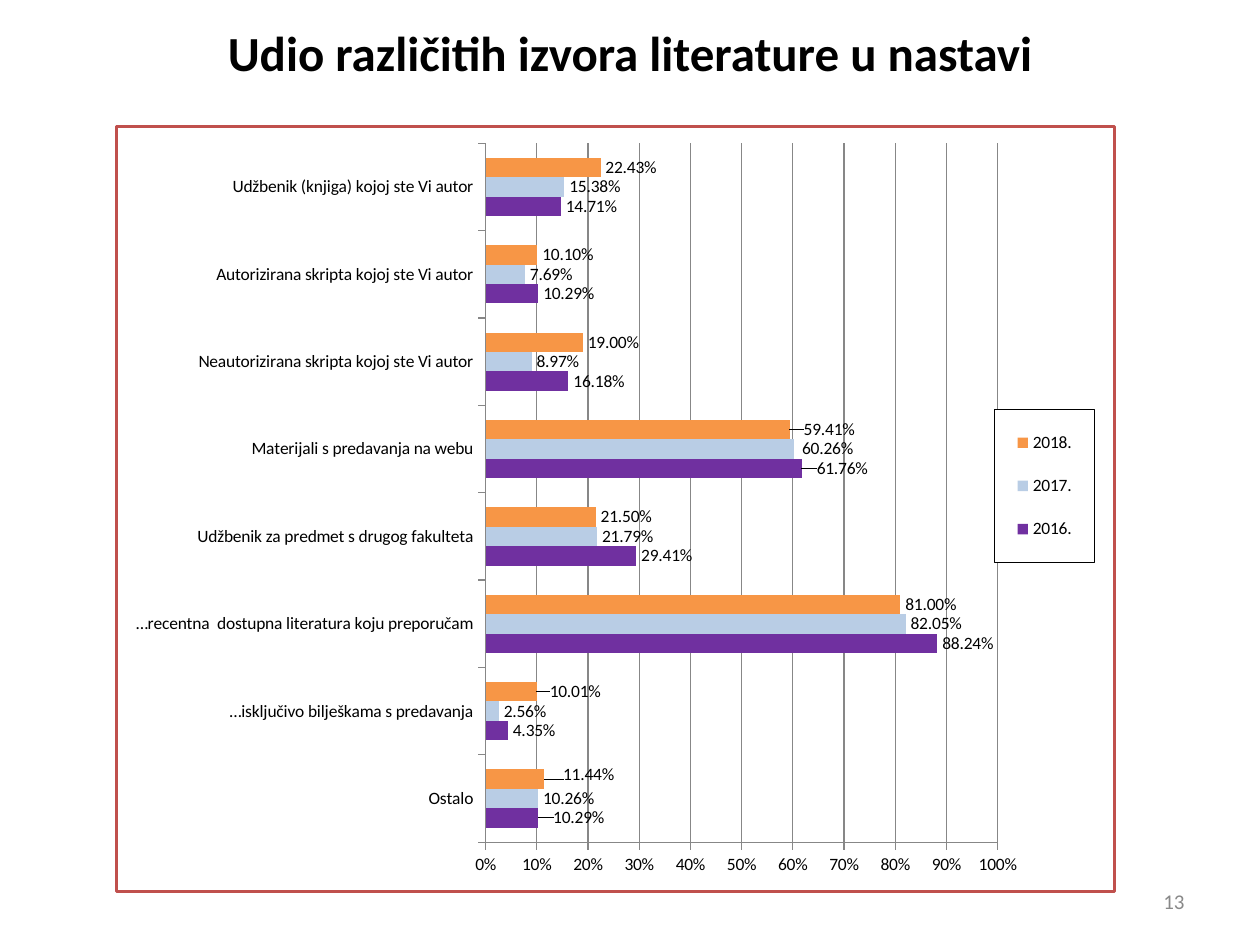
import pptx
import pptx.chart.data
import pptx.dml.color
import pptx.enum.chart
import pptx.enum.text
import pptx.oxml
import pptx.oxml.ns
import pptx.util

WIDTH, HEIGHT = 10, 7.5
FONT = "Calibri"
COLORS = {
    "text": "000000",
    "background": "FFFFFF",
    "number": "898989",
    "border": "C0504D",
    "grid": "878787",
    "2016.": "7030A0",
    "2017.": "B9CDE5",
    "2018.": "F79646",
}
CATEGORIES = [
    "Ostalo",
    "…isključivo bilješkama s predavanja",
    "…recentna  dostupna literatura koju preporučam",
    "Udžbenik za predmet s drugog fakulteta",
    "Materijali s predavanja na webu",
    "Neautorizirana skripta kojoj ste Vi autor",
    "Autorizirana skripta kojoj ste Vi autor",
    "Udžbenik (knjiga) kojoj ste Vi autor",
]
SHARES = {
    "2016.": [0.1029, 0.0435, 0.8824, 0.2941, 0.6176, 0.1618, 0.1029, 0.1471],
    "2017.": [0.1026, 0.0256, 0.8205, 0.2179, 0.6026, 0.0897, 0.0769, 0.1538],
    "2018.": [0.1144, 0.1001, 0.81, 0.215, 0.5941, 0.19, 0.101, 0.2243],
}
LABEL_SHIFTS = {
    "2016.": {0: (0.01, 0), 4: (0.01, 0)},
    "2017.": {4: (0.003, 0)},
    "2018.": {0: (0.014, -0.006), 1: (0.008, 0), 4: (0.009, 0)},
}


def color(name):
    return pptx.dml.color.RGBColor.from_string(COLORS[name])


def box(left, top, width, height):
    sizes = (left * WIDTH, top * HEIGHT, width * WIDTH, height * HEIGHT)
    return [pptx.util.Inches(size) for size in sizes]


def format_font(font, size, color_name="text", bold=False):
    font.name = FONT
    font.size = pptx.util.Pt(size)
    font.bold = bold
    font.color.rgb = color(color_name)


def format_line(line, color_name, width=0.75):
    line.color.rgb = color(color_name)
    line.width = pptx.util.Pt(width)


def chart_xml(tag, content):
    namespaces = pptx.oxml.ns.nsdecls("c", "a")
    return pptx.oxml.parse_xml(f"<c:{tag} {namespaces}>{content}</c:{tag}>")


def manual_layout(modes, **values):
    parts = modes + "".join(f'<c:{key} val="{value}"/>' for key, value in values.items())
    return chart_xml("layout", f"<c:manualLayout>{parts}</c:manualLayout>")


def frame_properties(color_name, width):
    return chart_xml(
        "spPr",
        f'<a:solidFill><a:srgbClr val="{COLORS["background"]}"/></a:solidFill>'
        f'<a:ln w="{pptx.util.Pt(width)}"><a:solidFill>'
        f'<a:srgbClr val="{COLORS[color_name]}"/></a:solidFill></a:ln>',
    )


def add_title(slide, text):
    title = slide.shapes.title
    title.left, title.top, title.width, title.height = box(0.071, 0.017, 0.858, 0.076)
    title.fill.solid()
    title.fill.fore_color.rgb = color("background")
    title.text_frame.text = text
    title.text_frame.vertical_anchor = pptx.enum.text.MSO_ANCHOR.MIDDLE
    paragraph = title.text_frame.paragraphs[0]
    paragraph.alignment = pptx.enum.text.PP_ALIGN.CENTER
    format_font(paragraph.runs[0].font, 28, bold=True)


def add_page_number(slide, text):
    frame = slide.shapes.add_textbox(*box(0.717, 0.927, 0.233, 0.053)).text_frame
    frame.word_wrap = True
    frame.vertical_anchor = pptx.enum.text.MSO_ANCHOR.MIDDLE
    frame.text = text
    paragraph = frame.paragraphs[0]
    paragraph.alignment = pptx.enum.text.PP_ALIGN.RIGHT
    format_font(paragraph.runs[0].font, 12, "number")


def format_series(series):
    series.format.fill.solid()
    series.format.fill.fore_color.rgb = color(series.name)
    labels = series.data_labels
    labels.show_value = True
    labels.number_format = "0.00%"
    labels.number_format_is_linked = False
    labels.position = pptx.enum.chart.XL_LABEL_POSITION.OUTSIDE_END
    for index, (x, y) in LABEL_SHIFTS[series.name].items():
        label = series.points[index].data_label
        label.position = pptx.enum.chart.XL_LABEL_POSITION.OUTSIDE_END
        mark = series._element.xpath(f'c:dLbls/c:dLbl/c:idx[@val="{index}"]')[0]
        mark.addnext(manual_layout("", x=x, y=y))


def format_axes(chart):
    for axis in (chart.category_axis, chart.value_axis):
        axis.major_tick_mark = pptx.enum.chart.XL_TICK_MARK.OUTSIDE
        axis.minor_tick_mark = pptx.enum.chart.XL_TICK_MARK.NONE
        format_line(axis.format.line, "grid")
    axis = chart.value_axis
    axis.minimum_scale, axis.maximum_scale, axis.major_unit = 0, 1, 0.1
    axis.tick_labels.number_format = "0%"
    axis.tick_labels.number_format_is_linked = False
    axis.has_major_gridlines = True
    format_line(axis.major_gridlines.format.line, "grid")


def add_legend(chart):
    chart.has_legend = True
    legend = chart.legend
    legend.position = pptx.enum.chart.XL_LEGEND_POSITION.RIGHT
    legend.include_in_layout = False
    modes = '<c:xMode val="edge"/><c:yMode val="edge"/>'
    layout = manual_layout(modes, x=0.88, y=0.37, w=0.1, h=0.2)
    for old_layout in legend._element.findall(pptx.oxml.ns.qn("c:layout")):
        legend._element.remove(old_layout)
    legend._element.find(pptx.oxml.ns.qn("c:legendPos")).addnext(layout)
    overlay = legend._element.find(pptx.oxml.ns.qn("c:overlay"))
    overlay.addnext(frame_properties("text", 0.75))


def place_plot(chart):
    area = chart._chartSpace.xpath("c:chart/c:plotArea")[0]
    for old_layout in area.findall(pptx.oxml.ns.qn("c:layout")):
        area.remove(old_layout)
    modes = '<c:layoutTarget val="inner"/><c:xMode val="edge"/><c:yMode val="edge"/>'
    area.insert(0, manual_layout(modes, x=0.37, y=0.022, w=0.513, h=0.914))


def add_bar_chart(slide):
    data = pptx.chart.data.CategoryChartData(number_format="0.00%")
    data.categories = CATEGORIES
    for year, shares in SHARES.items():
        data.add_series(year, shares)
    kind = pptx.enum.chart.XL_CHART_TYPE.BAR_CLUSTERED
    chart = slide.shapes.add_chart(kind, *box(0.091, 0.132, 0.795, 0.813), data).chart
    chart.has_title = False
    format_font(chart.font, 10)
    plot = chart.plots[0]
    plot.gap_width = 150
    plot.overlap = 0
    plot.vary_by_categories = False
    for series in plot.series:
        format_series(series)
    format_axes(chart)
    add_legend(chart)
    place_plot(chart)
    chart._chartSpace.xpath("c:chart")[0].addnext(frame_properties("border", 2))


def main():
    presentation = pptx.Presentation()
    presentation.slide_width = pptx.util.Inches(WIDTH)
    presentation.slide_height = pptx.util.Inches(HEIGHT)
    slide = presentation.slides.add_slide(presentation.slide_layouts[5])
    add_page_number(slide, "13")
    add_title(slide, "Udio različitih izvora literature u nastavi")
    add_bar_chart(slide)
    presentation.save("out.pptx")


if __name__ == "__main__":
    main()
